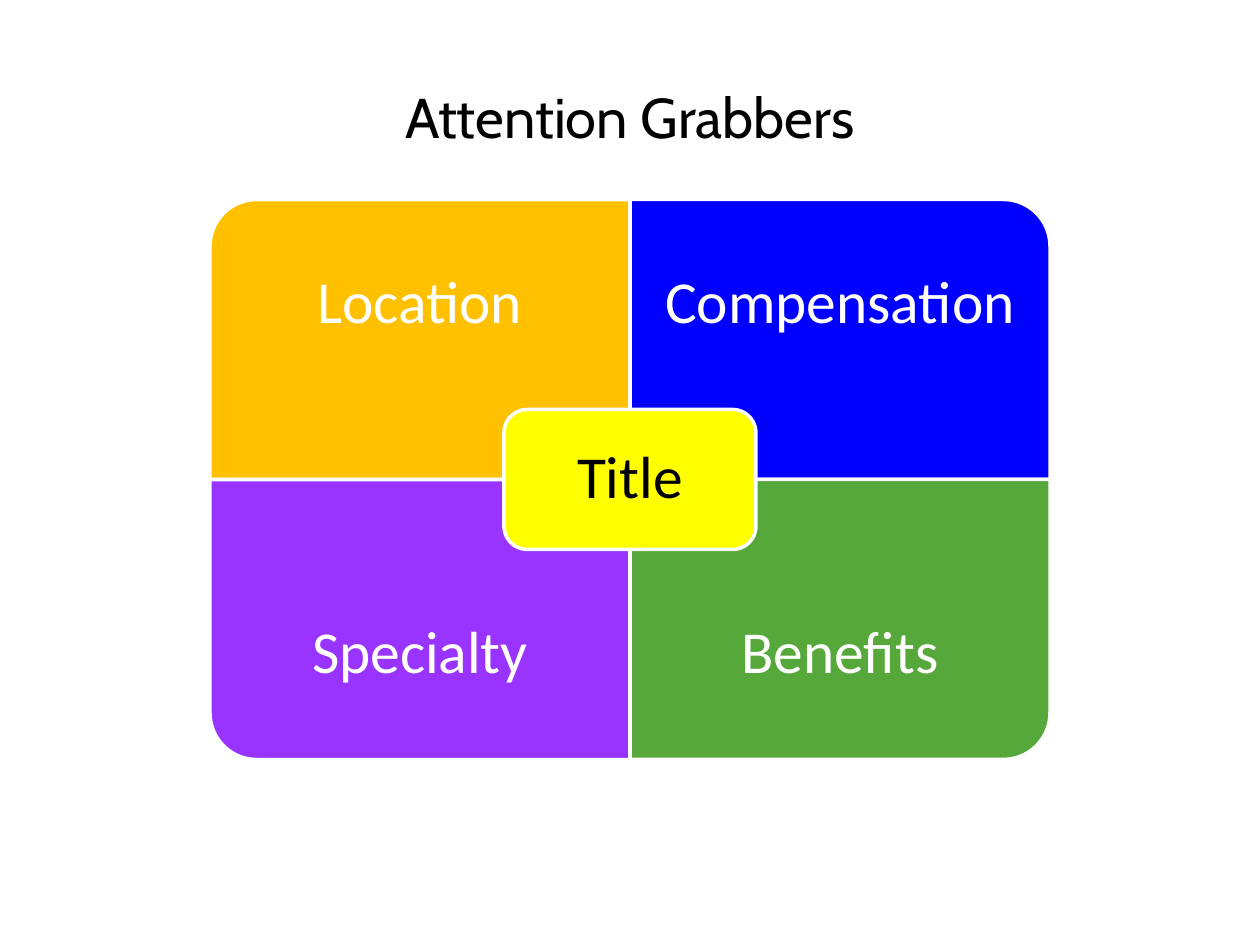
"""Build the Attention Grabbers slide: four coloured quadrants around a title."""
from pptx import Presentation
from pptx.dml.color import RGBColor
from pptx.enum import shapes, text
from pptx.util import Pt

WHITE = RGBColor(255, 255, 255)
BLACK = RGBColor(0, 0, 0)
GOLD = RGBColor(255, 192, 0)
BLUE = RGBColor(0, 0, 255)
PURPLE = RGBColor(153, 51, 255)
GREEN = RGBColor(85, 168, 57)
YELLOW = RGBColor(255, 255, 0)


def write(frame, words, font="Calibri", size=34, color=WHITE, inset=18.5, lead=0.9):
    frame.word_wrap = True
    frame.vertical_anchor = text.MSO_ANCHOR.MIDDLE
    frame.margin_left = frame.margin_right = Pt(inset)
    frame.margin_top = frame.margin_bottom = Pt(inset)
    line = frame.paragraphs[0]
    line.alignment = text.PP_ALIGN.CENTER
    line.line_spacing = lead
    run = line.add_run()
    run.text = words
    run.font.name = font
    run.font.size = Pt(size)
    run.font.color.rgb = color


def block(kind, left, top, width, height, fill):
    shape = slide.shapes.add_shape(kind, Pt(left), Pt(top), Pt(width), Pt(height))
    shape.shadow.inherit = False
    shape.fill.solid()
    shape.fill.fore_color.rgb = fill
    shape.line.color.rgb = WHITE
    shape.line.width = Pt(2)
    return shape


deck = Presentation()
deck.slide_width, deck.slide_height = Pt(720), Pt(540)
slide = deck.slides.add_slide(deck.slide_layouts[6])

LEFT, TOP, WIDE, HIGH, BAND = 120, 114, 240, 160, 120
parts = [
    ("Location", GOLD, 0, 0, 270),
    ("Compensation", BLUE, 1, 0, 0),
    ("Specialty", PURPLE, 0, 1, 180),
    ("Benefits", GREEN, 1, 1, 90),
]
for words, fill, col, row, turn in parts:
    x, y = LEFT + col * WIDE, TOP + row * HIGH
    w, h = (HIGH, WIDE) if turn % 180 else (WIDE, HIGH)
    part = block(shapes.MSO_SHAPE.ROUND_1_RECTANGLE,
                 x + (WIDE - w) / 2, y + (HIGH - h) / 2, w, h, fill)
    part.rotation = turn
    label = slide.shapes.add_textbox(
        Pt(x), Pt(y + row * (HIGH - BAND)), Pt(WIDE), Pt(BAND))
    write(label.text_frame, words)

hub = block(shapes.MSO_SHAPE.ROUNDED_RECTANGLE,
            LEFT + WIDE - 72, TOP + HIGH - 40, 144, 80, YELLOW)
write(hub.text_frame, "Title", color=BLACK, inset=10)

head = slide.shapes.add_textbox(Pt(36), Pt(21.6), Pt(648), Pt(90))
write(head.text_frame, "Attention Grabbers", font="Cabin", size=32,
      color=BLACK, inset=4, lead=1.0)

deck.save("out.pptx")
